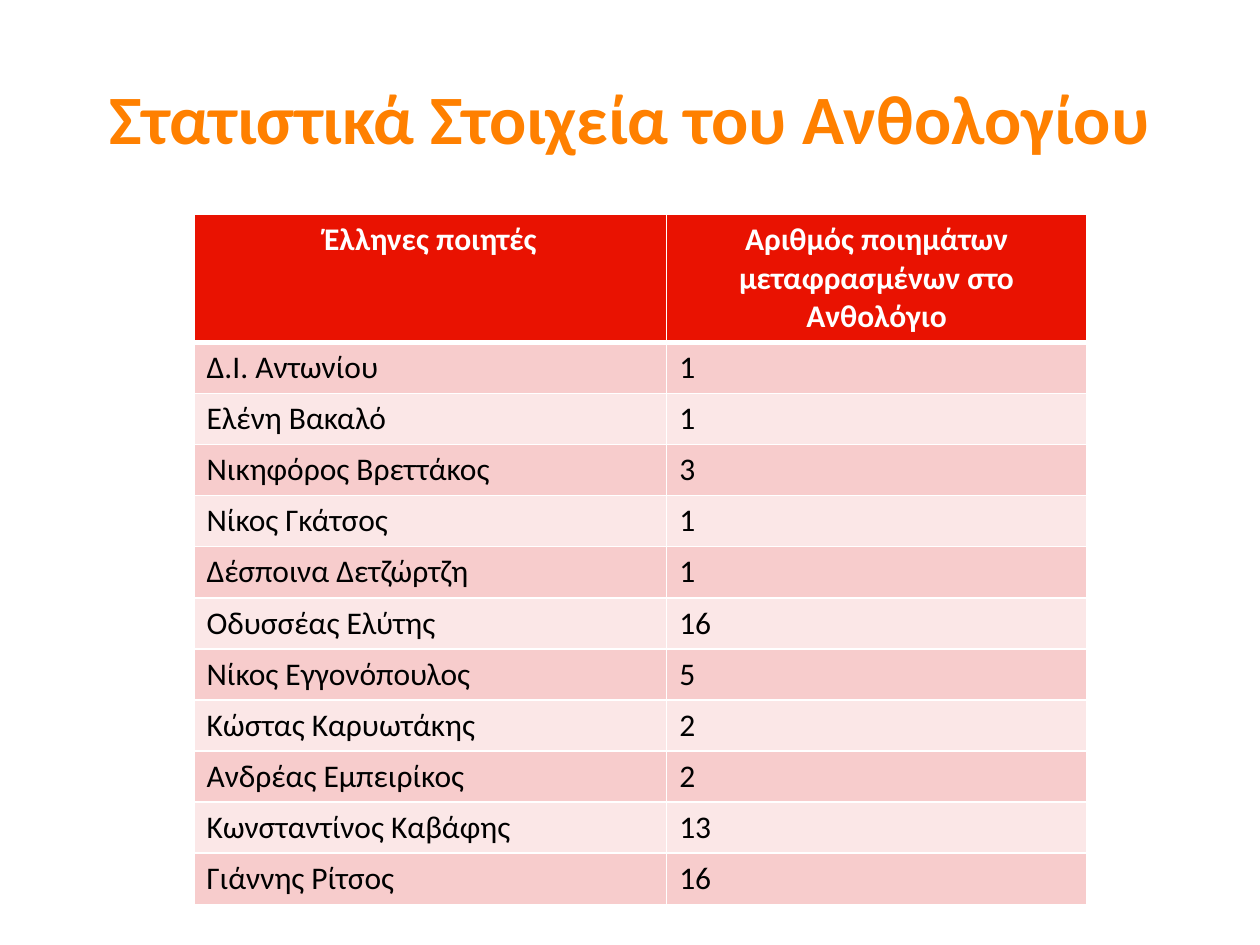
import pptx
import pptx.util
import pptx.dml.color
import pptx.enum.text
import pptx.oxml
import pptx.oxml.ns

Cm, Pt = pptx.util.Cm, pptx.util.Pt
RGBColor = pptx.dml.color.RGBColor
ALIGN = pptx.enum.text.PP_ALIGN

ORANGE = RGBColor(0xFF, 0x80, 0x00)
PALE = RGBColor(0xFA, 0xF9, 0xF9)
RED = RGBColor(0xE9, 0x12, 0x01)
ROSE = RGBColor(0xF7, 0xCC, 0xCC)
BLUSH = RGBColor(0xFB, 0xE7, 0xE7)
WHITE = RGBColor(0xFF, 0xFF, 0xFF)
BLACK = RGBColor(0x00, 0x00, 0x00)
FONT = "Calibri"

HEAD = ("Έλληνες ποιητές", "Αριθμός ποιημάτων μεταφρασμένων στο Ανθολόγιο")
POETS = [
    ("Δ.Ι. Αντωνίου", 1),
    ("Ελένη Βακαλό", 1),
    ("Νικηφόρος Βρεττάκος", 3),
    ("Νίκος Γκάτσος", 1),
    ("Δέσποινα Δετζώρτζη", 1),
    ("Οδυσσέας Ελύτης", 16),
    ("Νίκος Εγγονόπουλος", 5),
    ("Κώστας Καρυωτάκης", 2),
    ("Ανδρέας Εμπειρίκος", 2),
    ("Κωνσταντίνος Καβάφης", 13),
    ("Γιάννης Ρίτσος", 16),
]


def make_line(tag, color, width):
    """Return a solid line element, for a cell edge or a text outline."""
    return pptx.oxml.parse_xml(
        f'<a:{tag} {pptx.oxml.ns.nsdecls("a")} w="{Pt(width)}">'
        f'<a:solidFill><a:srgbClr val="{color}"/></a:solidFill></a:{tag}>')


def style_font(font, size, color, bold):
    font.name = FONT
    font.size = Pt(size)
    font.bold = bold
    font.color.rgb = color


def set_title(slide, text):
    title = slide.shapes.title
    title.left, title.top = Cm(1.27), Cm(0.76)
    title.width, title.height = Cm(22.86), Cm(3.18)
    frame = title.text_frame
    frame.auto_size = pptx.enum.text.MSO_AUTO_SIZE.NONE
    frame.vertical_anchor = pptx.enum.text.MSO_ANCHOR.MIDDLE
    para = frame.paragraphs[0]
    para.alignment = ALIGN.CENTER
    run = para.add_run()
    run.text = text
    style_font(run.font, 39.6, ORANGE, True)
    run.font._element.insert(0, make_line("ln", PALE, 1.5))


def fill_cell(cell, text, fill, color, head, edges):
    """Write one cell; edges gives the widths of its left, right, top, bottom."""
    cell.text = str(text)
    para = cell.text_frame.paragraphs[0]
    para.alignment = ALIGN.CENTER if head else ALIGN.LEFT
    style_font(para.font, 18, color, head)
    cell.fill.solid()
    cell.fill.fore_color.rgb = fill
    props = cell._tc.get_or_add_tcPr()
    for i, (side, width) in enumerate(zip("LRTB", edges)):
        props.insert(i, make_line("ln" + side, WHITE, width))


def add_poets(slide):
    rows = [HEAD] + POETS
    frame = slide.shapes.add_table(
        len(rows), len(HEAD), Cm(3.91), Cm(4.32), Cm(18), Cm(13.72))
    table = frame.table
    for col, width in zip(table.columns, (9.53, 8.46)):
        col.width = Cm(width)
    for r, row in enumerate(rows):
        head = r == 0
        table.rows[r].height = Cm(2.29 if head else 0.91)
        fill = RED if head else ROSE if r % 2 else BLUSH
        color = WHITE if head else BLACK
        edges = (1, 1, 3 if r == 1 else 1, 3 if head else 1)
        for c, text in enumerate(row):
            fill_cell(table.cell(r, c), text, fill, color, head, edges)
    frame.height = Cm(13.72)


def main():
    deck = pptx.Presentation()
    deck.slide_width, deck.slide_height = Cm(25.4), Cm(19.05)
    slide = deck.slides.add_slide(deck.slide_layouts[5])
    set_title(slide, "Στατιστικά Στοιχεία του Ανθολογίου")
    add_poets(slide)
    deck.save("out.pptx")


if __name__ == "__main__":
    main()
